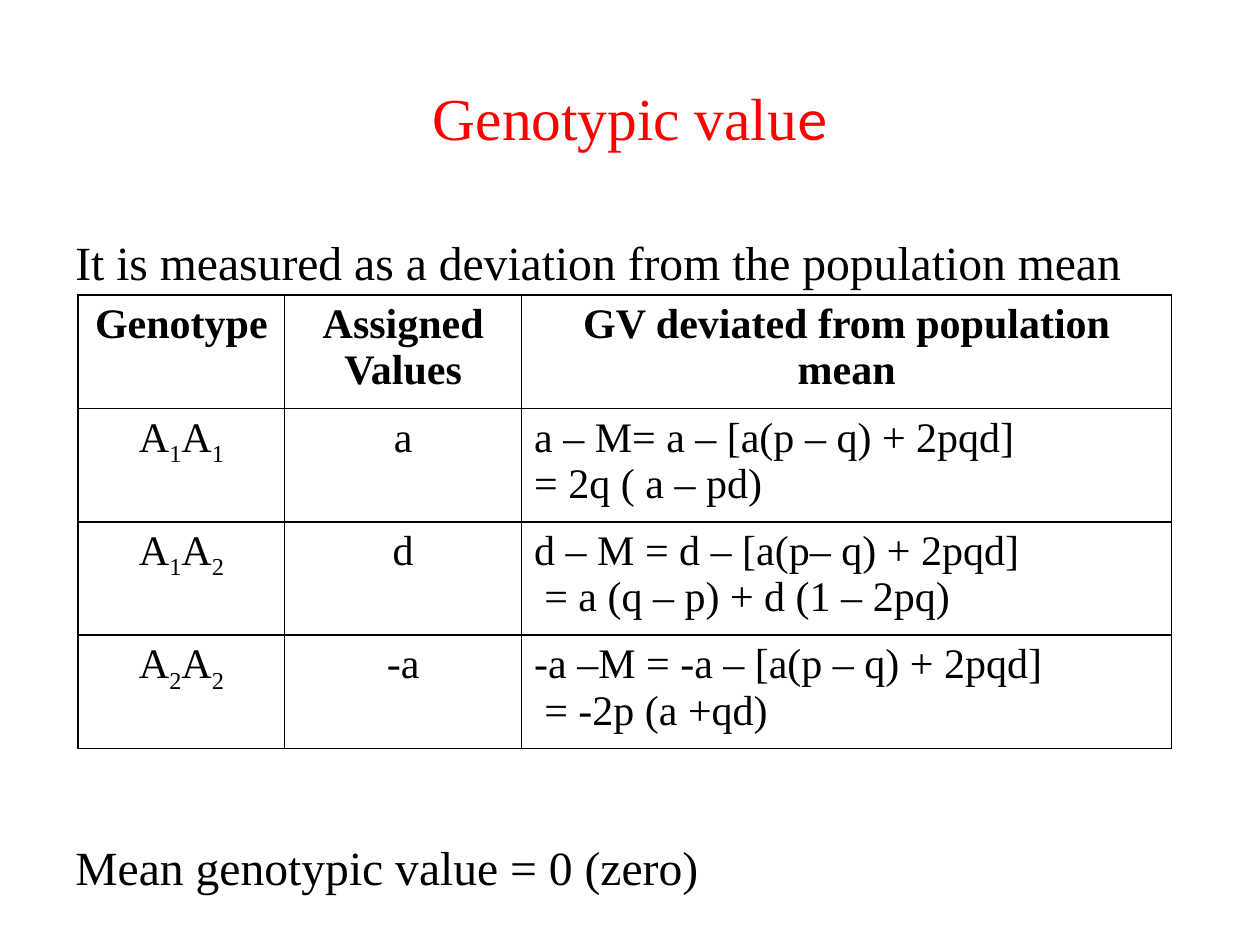
import pptx
import pptx.util
from lxml import etree
from pptx.dml.color import RGBColor
from pptx.enum.text import MSO_ANCHOR, PP_ALIGN
from pptx.oxml.ns import qn
from pptx.util import Inches, Pt

BLACK = RGBColor(0, 0, 0)
RED = RGBColor(255, 0, 0)
SERIF = "Times New Roman"

TITLE = [("Genotypic valu", SERIF), ("e", "Calibri")]
STATEMENTS = [  # text, points of space before
    ("It is measured as a deviation from the population mean", 0),
    ("Mean genotypic value = 0 (zero)", 312.8),
]
HEADERS = ["Genotype", "Assigned Values", "GV deviated from population mean"]
GENOTYPES = [  # allele numbers, assigned value, derivation, indent of its second line
    ("11", "a", ["a – M= a – [a(p – q) + 2pqd]", "= 2q ( a – pd)"], 0),
    ("12", "d", ["d – M = d – [a(p– q) + 2pqd]", "= a (q – p) + d (1 – 2pq)"], 0.08),
    ("22", "-a", ["-a –M = -a – [a(p – q) + 2pqd]", "= -2p (a +qd)"], 0.08),
]
COL_WIDTHS = [1.64, 1.88, 5.16]
ROW_HEIGHT = 0.84


def add_run(p, text, size, font=SERIF, color=BLACK, bold=False, subscript=False):
    r = p.add_run()
    r.text = text
    r.font.size = Pt(size)
    r.font.name = font
    r.font.bold = bold
    r.font.color.rgb = color
    if subscript:
        r.font._element.set("baseline", "-25000")


def add_cell_text(p, text, **style):
    add_run(p, text, 24, **style)


def format_cell(cell):
    """Give the cell black 1 pt borders and no fill."""
    tcPr = cell._tc.get_or_add_tcPr()
    for side in ("a:lnL", "a:lnR", "a:lnT", "a:lnB"):
        ln = etree.SubElement(tcPr, qn(side), w=str(Pt(1)))
        fill = etree.SubElement(ln, qn("a:solidFill"))
        etree.SubElement(fill, qn("a:srgbClr"), val=str(BLACK))
    cell.fill.background()


def add_title(s):
    title = s.shapes.title
    title.left, title.top = Inches(0.5), Inches(0.3)
    title.width, title.height = Inches(9), Inches(1.25)
    title.text_frame.vertical_anchor = MSO_ANCHOR.MIDDLE
    p = title.text_frame.paragraphs[0]
    p.alignment = PP_ALIGN.CENTER
    for text, font in TITLE:
        add_run(p, text, 34, font, RED)


def add_statements(s):
    box = s.shapes.add_textbox(Inches(0.5), Inches(1.8), Inches(9), Inches(5.31))
    tf = box.text_frame
    tf.word_wrap = True
    for i, (text, space) in enumerate(STATEMENTS):
        p = tf.add_paragraph() if i else tf.paragraphs[0]
        p.alignment = PP_ALIGN.JUSTIFY
        p.space_before = Pt(space)
        add_run(p, text, 27.2)


def add_genotype_table(s):
    n_rows = len(GENOTYPES) + 1
    table = s.shapes.add_table(n_rows, len(HEADERS), Inches(0.62), Inches(2.34),
                               Inches(sum(COL_WIDTHS)), Inches(ROW_HEIGHT * n_rows)).table
    table.first_row = table.horz_banding = False
    for col, width in zip(table.columns, COL_WIDTHS):
        col.width = Inches(width)
    for row in table.rows:
        row.height = Inches(ROW_HEIGHT)
    for cell in table.iter_cells():
        format_cell(cell)
        cell.text_frame.paragraphs[0].alignment = PP_ALIGN.CENTER

    for c, header in enumerate(HEADERS):
        add_cell_text(table.cell(0, c).text_frame.paragraphs[0], header, bold=True)

    for row, (alleles, value, derivation, indent) in enumerate(GENOTYPES, 1):
        genotype, assigned, deviation = (table.cell(row, c).text_frame for c in range(3))
        for number in alleles:
            add_cell_text(genotype.paragraphs[0], "A")
            add_cell_text(genotype.paragraphs[0], number, subscript=True)
        add_cell_text(assigned.paragraphs[0], value)
        first, second = deviation.paragraphs[0], deviation.add_paragraph()
        second._p.get_or_add_pPr().set("marL", str(Inches(indent)))
        for p, text in zip((first, second), derivation):
            p.alignment = PP_ALIGN.LEFT
            add_cell_text(p, text)


def main():
    prs = pptx.Presentation()
    prs.slide_width, prs.slide_height = Inches(10), Inches(7.5)
    s = prs.slides.add_slide(prs.slide_layouts[5])
    add_title(s)
    add_statements(s)
    add_genotype_table(s)
    prs.save("out.pptx")


if __name__ == "__main__":
    main()
